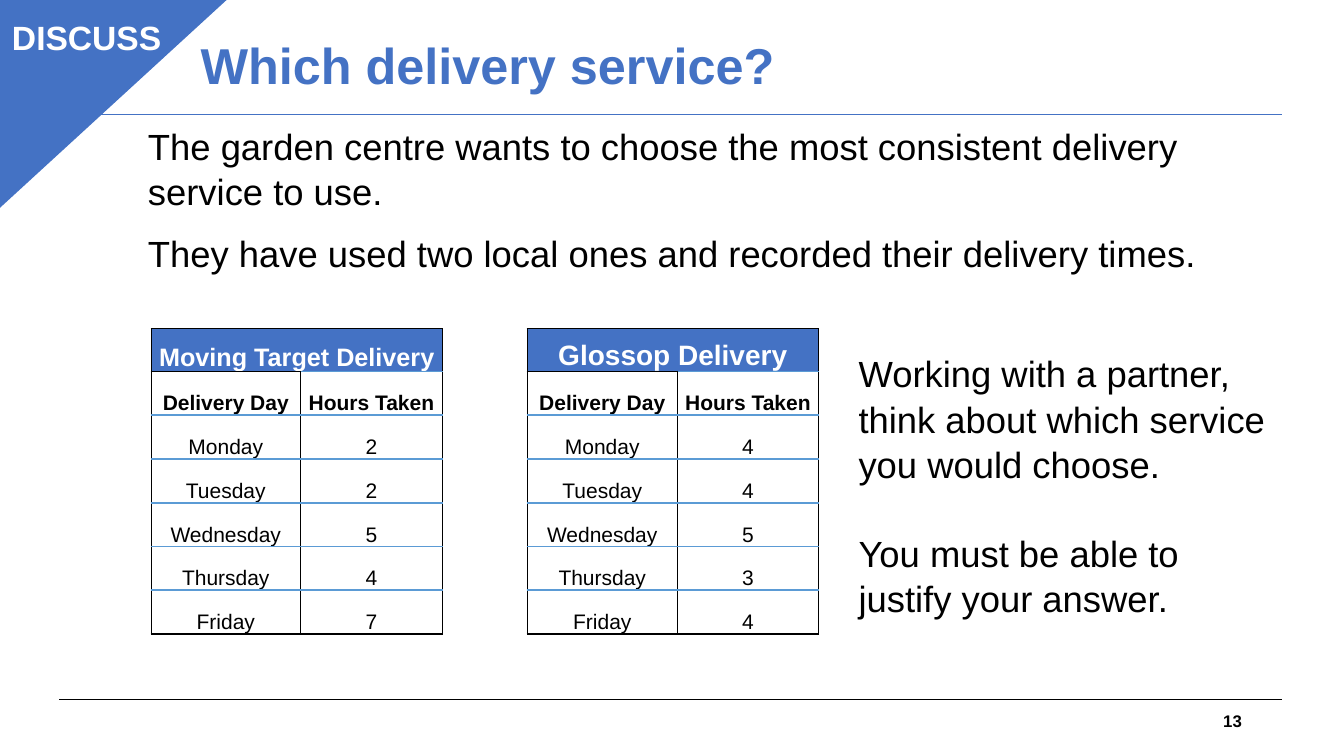
from dataclasses import dataclass

from lxml import etree
from pptx import Presentation
from pptx.dml.color import RGBColor
from pptx.enum.shapes import MSO_CONNECTOR, MSO_SHAPE
from pptx.enum.text import MSO_ANCHOR, PP_ALIGN
from pptx.oxml.ns import qn
from pptx.util import Pt

STRAIGHT = MSO_CONNECTOR.STRAIGHT
TRIANGLE = MSO_SHAPE.ISOSCELES_TRIANGLE
LEFT, CENTER, RIGHT = PP_ALIGN.LEFT, PP_ALIGN.CENTER, PP_ALIGN.RIGHT
TOP, MIDDLE, BOTTOM = MSO_ANCHOR.TOP, MSO_ANCHOR.MIDDLE, MSO_ANCHOR.BOTTOM

TITLE = "Which delivery service?"
BADGE = "DISCUSS"
PAGE_NUMBER = "13"
INTRO = [
    "The garden centre wants to choose the most consistent delivery service to use.",
    "They have used two local ones and recorded their delivery times.",
]
TASK = [
    "Working with a partner, think about which service you would choose.",
    "You must be able to justify your answer.",
]
DAYS = ["Monday", "Tuesday", "Wednesday", "Thursday", "Friday"]
HEADINGS = ("Delivery Day", "Hours Taken")
SERVICES = [
    {"name": "Moving Target Delivery", "size": 18, "hours": [2, 2, 5, 4, 7]},
    {"name": "Glossop Delivery", "size": 20, "hours": [4, 4, 5, 3, 4]},
]


@dataclass(frozen=True)
class Theme:
    font: str = "Arial"
    blue: str = "4472C4"
    rule: str = "5B9BD5"
    black: str = "000000"
    white: str = "FFFFFF"
    title: float = 36
    badge: float = 24
    body: float = 26
    cell: float = 15
    number: float = 12


THEME = Theme()
BLACK_EDGE = (THEME.black, 1)
BLUE_EDGE = (THEME.rule, 1.5)
COLUMN_WIDTHS = [106.6, 101.5, 60.5, 107.3, 100.8]
HEADER_HEIGHT, ROW_HEIGHT = 30.5, 31.25
GAP_COLUMN = 2


def write(frame, texts, size, color=THEME.black, bold=False, align=LEFT,
          anchor=TOP, spacing=None, gap=0):
    """Fill a text frame with paragraphs, gap points apart."""
    frame.word_wrap = True
    frame.vertical_anchor = anchor
    for index, text in enumerate(texts):
        para = frame.add_paragraph() if index else frame.paragraphs[0]
        para.alignment = align
        para.space_before = Pt(gap if index else 0)
        if spacing:
            para.line_spacing = spacing
        span = para.add_run()
        span.text = text
        span.font.name = THEME.font
        span.font.size = Pt(size)
        span.font.bold = bold
        span.font.color.rgb = RGBColor.from_string(color)


def add_text(page, place, texts, size, **style):
    box = page.shapes.add_textbox(*map(Pt, place))
    write(box.text_frame, texts, size, **style)
    return box


def add_rule(page, y, color):
    line = page.shapes.add_connector(STRAIGHT, Pt(42.5), Pt(y), Pt(915.8), Pt(y))
    line.line.color.rgb = RGBColor.from_string(color)
    line.line.width = Pt(0.75)
    etree.SubElement(line.element.spPr, qn("a:effectLst"))


def add_badge(page):
    corner = page.shapes.add_shape(TRIANGLE, Pt(-2.2), Pt(-1.4), Pt(164.9), Pt(151.2))
    corner.adjustments[0] = 0
    corner.element.spPr.find(qn("a:xfrm")).set("flipV", "1")
    corner.shadow.inherit = False
    corner.fill.solid()
    corner.fill.fore_color.rgb = RGBColor.from_string(THEME.blue)
    corner.line.color.rgb = RGBColor.from_string(THEME.blue)
    corner.line.width = Pt(1)
    label = add_text(page, (-0.7, 8.6, 125.3, 36), [BADGE], THEME.badge,
                     color=THEME.white, bold=True, align=CENTER)
    page.shapes.add_group_shape([corner, label])


def set_borders(cell, top, bottom):
    """Draw black sides and the given top and bottom edges; None hides an edge."""
    properties = cell._tc.get_or_add_tcPr()
    edges = {"L": BLACK_EDGE, "R": BLACK_EDGE, "T": top, "B": bottom}
    for side, edge in edges.items():
        line = etree.SubElement(properties, qn(f"a:ln{side}"))
        if edge is None:
            etree.SubElement(line, qn("a:noFill"))
            continue
        color, width = edge
        line.set("w", str(Pt(width)))
        fill = etree.SubElement(line, qn("a:solidFill"))
        etree.SubElement(fill, qn("a:srgbClr")).set("val", color)


def cell_edges(row, column, last_row):
    if column == GAP_COLUMN:
        return None, None
    if row == 0:
        return BLACK_EDGE, BLACK_EDGE
    is_day = column in (0, GAP_COLUMN + 1)
    top = BLACK_EDGE if row == 1 and is_day else BLUE_EDGE
    return top, BLACK_EDGE if row == last_row else BLUE_EDGE


def format_cell(cell, row, column, last_row):
    cell.margin_left = cell.margin_right = cell.margin_top = Pt(0.7)
    cell.margin_bottom = Pt(0)
    cell.vertical_anchor = BOTTOM
    set_borders(cell, *cell_edges(row, column, last_row))
    if row == 0 and column != GAP_COLUMN:
        cell.fill.solid()
        cell.fill.fore_color.rgb = RGBColor.from_string(THEME.blue)
    else:
        cell.fill.background()


def add_times_table(page):
    heights = [HEADER_HEIGHT] + [ROW_HEIGHT] * (len(DAYS) + 1)
    frame = page.shapes.add_table(len(heights), len(COLUMN_WIDTHS), Pt(108), Pt(234.9),
                                  Pt(sum(COLUMN_WIDTHS)), Pt(sum(heights)))
    table = frame.table
    table.first_row = table.horz_banding = False
    for column, width in zip(table.columns, COLUMN_WIDTHS):
        column.width = Pt(width)
    for row, height in enumerate(heights):
        table.rows[row].height = Pt(height)
        for column in range(len(COLUMN_WIDTHS)):
            format_cell(table.cell(row, column), row, column, len(heights) - 1)

    for index, service in enumerate(SERVICES):
        first = index * (GAP_COLUMN + 1)
        header = table.cell(0, first)
        header.merge(table.cell(0, first + 1))
        write(header.text_frame, [service["name"]], service["size"],
              color=THEME.white, bold=True, align=CENTER, anchor=BOTTOM)
        lines = [HEADINGS, *zip(DAYS, service["hours"])]
        for row, values in enumerate(lines, start=1):
            for column, value in enumerate(values, start=first):
                write(table.cell(row, column).text_frame, [str(value)], THEME.cell,
                      bold=row == 1, align=CENTER, anchor=BOTTOM)


def main():
    deck = Presentation()
    deck.slide_width, deck.slide_height = Pt(960), Pt(540)
    page = deck.slides.add_slide(deck.slide_layouts[5])

    add_rule(page, 499.7, THEME.black)
    add_rule(page, 82.1, THEME.blue)
    title = page.shapes.title
    title.left, title.top, title.width, title.height = map(Pt, (136.1, 8.6, 619.9, 79.9))
    write(title.text_frame, [TITLE], THEME.title, color=THEME.blue, bold=True,
          anchor=MIDDLE, spacing=0.9)
    add_text(page, (678.2, 500.4, 216, 28.8), [PAGE_NUMBER], THEME.number,
             bold=True, align=RIGHT, anchor=MIDDLE)
    add_badge(page)
    add_text(page, (98.6, 83.5, 824.4, 113.8), INTRO, THEME.body, spacing=1.04, gap=12)
    add_text(page, (606.2, 246.2, 316.8, 196.6), TASK, THEME.body, spacing=1.04, gap=31)
    add_times_table(page)
    deck.save("out.pptx")


if __name__ == "__main__":
    main()
